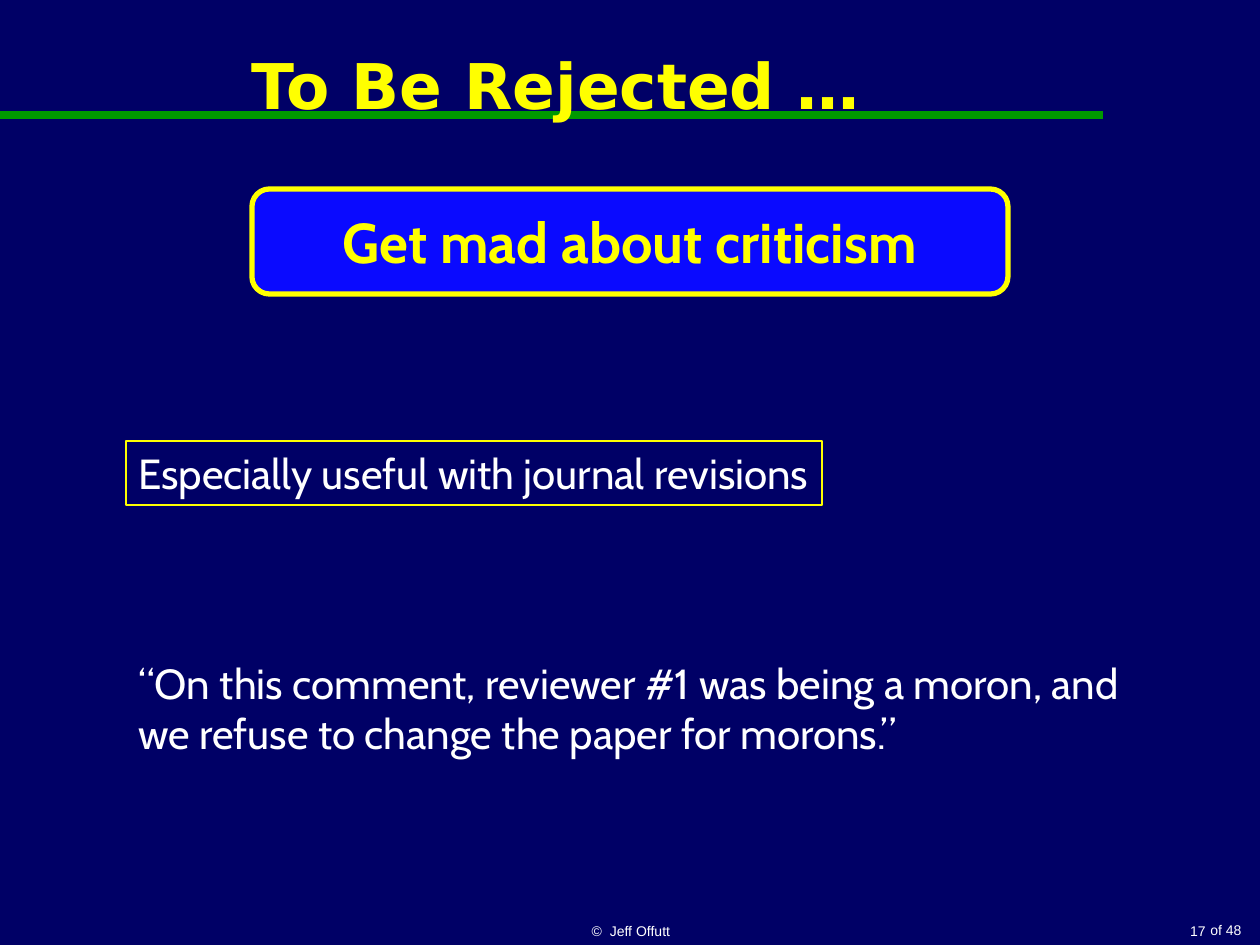
from lxml import etree
from pptx import Presentation
from pptx.dml.color import RGBColor
from pptx.enum import shapes, text
from pptx.oxml import ns
from pptx.util import Pt

PX = 914400 // 126
COLORS = {"navy": "000066", "blue": "0A0AFF", "green": "009900",
          "yellow": "FFFF00", "white": "FFFFFF"}
LEFT, CENTER, RIGHT = text.PP_ALIGN.LEFT, text.PP_ALIGN.CENTER, text.PP_ALIGN.RIGHT
TOP, MIDDLE, BOTTOM = text.MSO_ANCHOR.TOP, text.MSO_ANCHOR.MIDDLE, text.MSO_ANCHOR.BOTTOM

TITLE = ("To Be Rejected …", (10, 0, 1092, 168))
MESSAGE = ("Get mad about criticism", (252, 189, 756, 105))
RULE_Y, RULE_END = 115, 1103
# words, box, wraps, outlined
BODY = [
    ("Especially useful with journal revisions", (126, 441, 696, 64), False, True),
    ("“On this comment, reviewer #1 was being a moron, and we refuse to change "
     "the paper for morons.”", (126, 651, 1008, 115), True, False),
]
# words, box, alignment, anchor, wraps
FOOTER = [
    ("of 48", (1197, 915, 57, 30), RIGHT, TOP, False),
    ("©  Jeff Offutt", (431, 903, 400, 42), CENTER, BOTTOM, True),
    ("17", (998, 903, 220, 42), RIGHT, BOTTOM, True),
]


def rgb(name):
    return RGBColor.from_string(COLORS[name])


def emu(box):
    return [length * PX for length in box]


def outline(shape, color, width):
    shape.line.color.rgb = rgb(color)
    shape.line.width = Pt(width)


def write(shape, words, font, size, color, bold=False, align=LEFT, anchor=TOP, wrap=True):
    frame = shape.text_frame
    frame.text = words
    frame.word_wrap = wrap
    frame.vertical_anchor = anchor
    paragraph = frame.paragraphs[0]
    paragraph.alignment = align
    paragraph.font.name = font
    paragraph.font.size = Pt(size)
    paragraph.font.bold = bold
    paragraph.font.color.rgb = rgb(color)


presentation = Presentation()
presentation.slide_width, presentation.slide_height = emu((1260, 945))
slide = presentation.slides.add_slide(presentation.slide_layouts[5])
slide.background.fill.solid()
slide.background.fill.fore_color.rgb = rgb("navy")

words, box = TITLE
title = slide.shapes.title
title.left, title.top, title.width, title.height = emu(box)
write(title, words, "DejaVu Sans", 36, "yellow", True, CENTER, MIDDLE)

rule = slide.shapes.add_connector(shapes.MSO_CONNECTOR.STRAIGHT,
                                  *emu((0, RULE_Y, RULE_END, RULE_Y)))
outline(rule, "green", 4.5)
etree.SubElement(rule._element.spPr, ns.qn("a:effectLst"))
title._element.addprevious(rule._element)  # the title overlaps the rule

for words, box, align, anchor, wrap in FOOTER:
    footer = slide.shapes.add_textbox(*emu(box))
    write(footer, words, "Arial", 8, "white", align=align, anchor=anchor, wrap=wrap)

words, box = MESSAGE
message = slide.shapes.add_shape(shapes.MSO_SHAPE.ROUNDED_RECTANGLE, *emu(box))
message.shadow.inherit = False
message.fill.solid()
message.fill.fore_color.rgb = rgb("blue")
outline(message, "yellow", 3)
write(message, words, "Cabin", 32, "yellow", True, CENTER, MIDDLE)

for words, box, wrap, outlined in BODY:
    note = slide.shapes.add_textbox(*emu(box))
    write(note, words, "Cabin", 24, "white", wrap=wrap)
    note.text_frame.auto_size = text.MSO_AUTO_SIZE.SHAPE_TO_FIT_TEXT
    if outlined:
        outline(note, "yellow", 0.75)

presentation.save("out.pptx")
